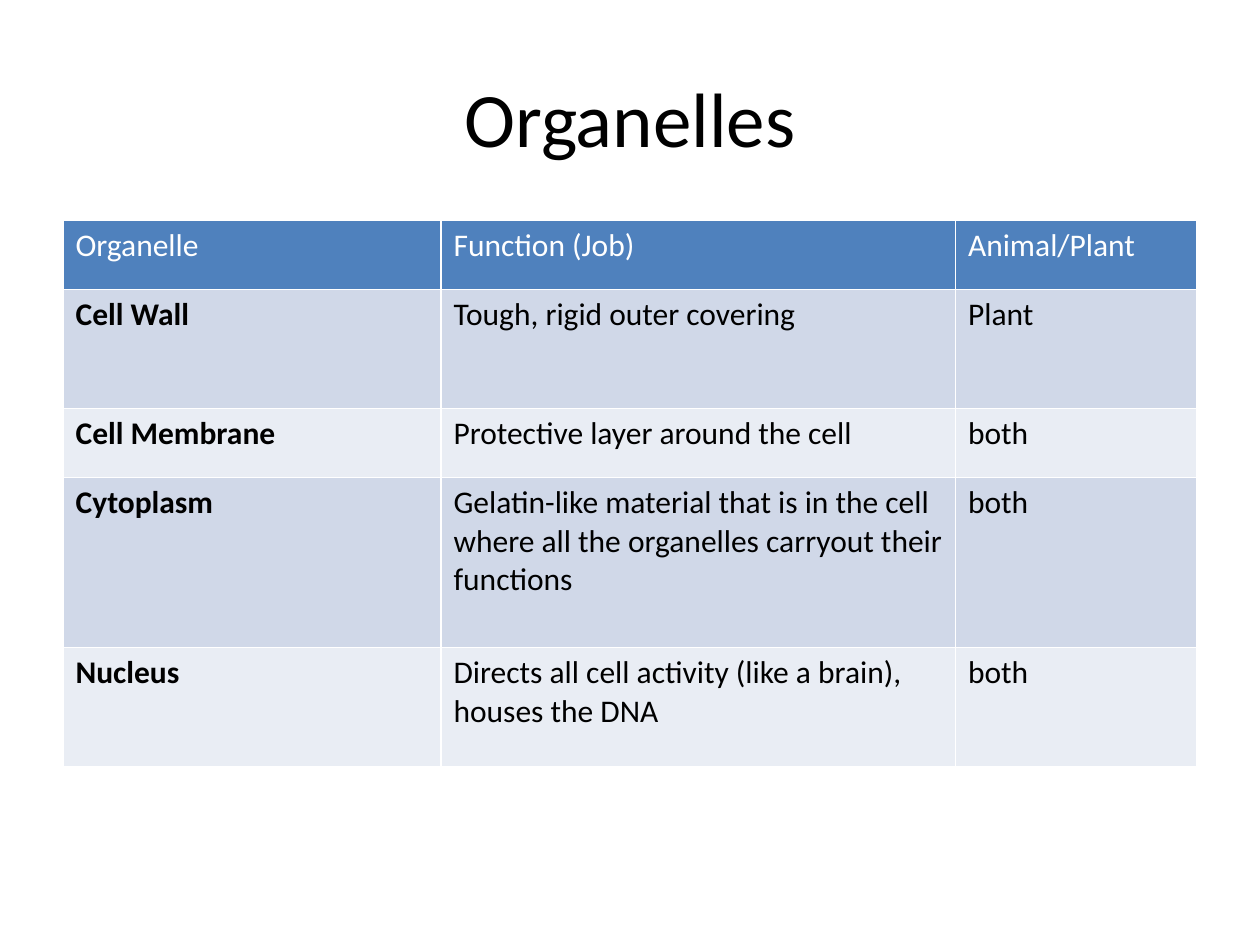
from lxml.etree import SubElement
from pptx import Presentation
from pptx.dml.color import RGBColor
from pptx.enum.text import MSO_ANCHOR, PP_ALIGN
from pptx.oxml.ns import qn
from pptx.util import Pt

# Content
TITLE = "Organelles"
ROWS = [
    ("Organelle", "Function (Job)", "Animal/Plant"),
    ("Cell Wall", "Tough, rigid outer covering", "Plant"),
    ("Cell Membrane", "Protective layer around the cell", "both"),
    ("Cytoplasm", "Gelatin-like material that is in the cell where all the "
     "organelles carryout their functions", "both"),
    ("Nucleus", "Directs all cell activity (like a brain), houses the DNA", "both"),
]

# Layout and style
COLUMN_WIDTHS = (216, 294, 138)
ROW_HEIGHTS = (39.5, 68, 39.5, 97, 68)
LEFT, TABLE_TOP = 36, 126
WIDTH = sum(COLUMN_WIDTHS)
FONT = "Calibri"
BLACK = RGBColor(0x00, 0x00, 0x00)
WHITE = RGBColor(0xFF, 0xFF, 0xFF)
HEADER_BLUE = RGBColor(0x4F, 0x81, 0xBD)
BANDS = (RGBColor(0xE9, 0xED, 0xF4), RGBColor(0xD0, 0xD8, 0xE8))


def add_borders(cell, color, width):
    properties = cell._tc.get_or_add_tcPr()
    for side in ("a:lnL", "a:lnR", "a:lnT", "a:lnB"):
        line = SubElement(properties, qn(side), w=str(Pt(width)))
        fill = SubElement(line, qn("a:solidFill"))
        SubElement(fill, qn("a:srgbClr"), val=str(color))


def style_font(paragraph, size, color, bold=False):
    font = paragraph.font
    font.name, font.size, font.bold = FONT, Pt(size), bold
    font.color.rgb = color


presentation = Presentation()
presentation.slide_width, presentation.slide_height = Pt(720), Pt(540)
slide = presentation.slides.add_slide(presentation.slide_layouts[6])

# Title
title = slide.shapes.add_textbox(Pt(LEFT), Pt(21.6), Pt(WIDTH), Pt(90))
title.fill.solid()
title.fill.fore_color.rgb = WHITE
frame = title.text_frame
frame.word_wrap = True
frame.vertical_anchor = MSO_ANCHOR.MIDDLE
frame.text = TITLE
paragraph = frame.paragraphs[0]
paragraph.alignment = PP_ALIGN.CENTER
style_font(paragraph, 44, BLACK)

# Table
table = slide.shapes.add_table(
    len(ROWS), len(COLUMN_WIDTHS), Pt(LEFT), Pt(TABLE_TOP),
    Pt(WIDTH), Pt(sum(ROW_HEIGHTS))).table
for column, width in zip(table.columns, COLUMN_WIDTHS):
    column.width = Pt(width)
for row, height in zip(table.rows, ROW_HEIGHTS):
    row.height = Pt(height)

for row_index, texts in enumerate(ROWS):
    is_header = row_index == 0
    for column_index, text in enumerate(texts):
        cell = table.cell(row_index, column_index)
        add_borders(cell, WHITE, 1)
        cell.fill.solid()
        cell.fill.fore_color.rgb = HEADER_BLUE if is_header else BANDS[row_index % 2]
        cell.text = text
        style_font(cell.text_frame.paragraphs[0], 18,
                   WHITE if is_header else BLACK,
                   bold=column_index == 0 and not is_header)

presentation.save("out.pptx")
